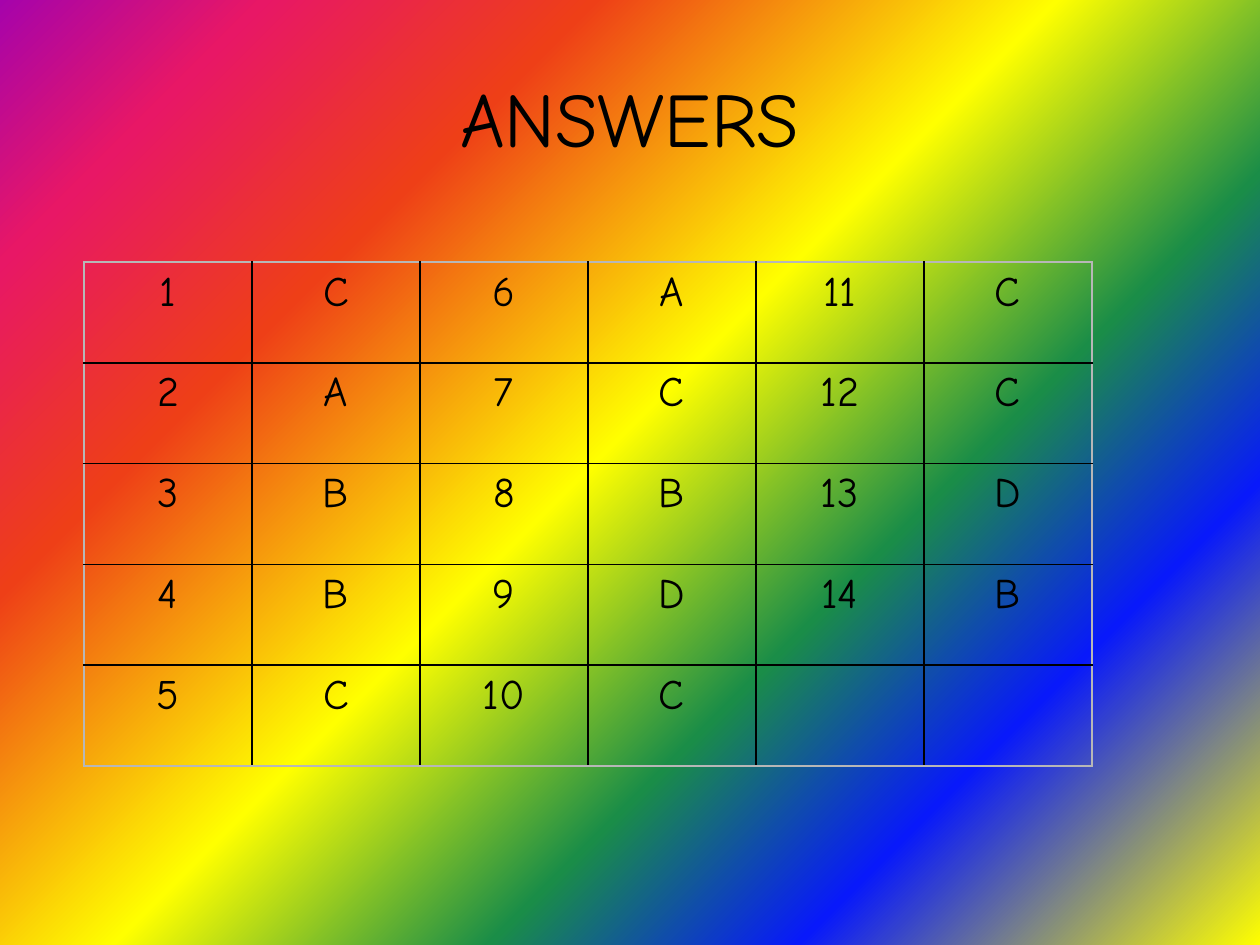
from pptx import Presentation
from pptx.dml.color import RGBColor
from pptx.enum.text import MSO_ANCHOR, PP_ALIGN
from pptx.oxml import parse_xml
from pptx.oxml.ns import nsdecls
from pptx.util import Pt

CENTER = PP_ALIGN.CENTER
MIDDLE = MSO_ANCHOR.MIDDLE
SCALE = 914400 / 126
FONT = "Comic Neue"
COLORS = {
    "ink": "000000",
    "edge": "B7B7B7",
    "yellow": "FFFF00",
    "blue": "0819FB",
    "green": "1A8D48",
    "red": "EE3F17",
    "pink": "E81766",
    "purple": "A603AB",
}
RAINBOW = [(0, "yellow"), (21, "blue"), (35, "green"), (52, "yellow"),
           (73, "red"), (88, "pink"), (100, "purple")]
ANSWERS = "CABBCACBDCCCDB"
ROWS, COLS = 5, 6


def px(n):
    return round(n * SCALE)


def style(para, size):
    para.alignment = CENTER
    para.font.name = FONT
    para.font.size = Pt(size)
    para.font.color.rgb = RGBColor.from_string(COLORS["ink"])


def add_rainbow(slide):
    stops = "".join(
        f'<a:gs pos="{pos * 1000}"><a:srgbClr val="{COLORS[name]}"/></a:gs>'
        for pos, name in RAINBOW)
    back = parse_xml(
        f'<p:bg {nsdecls("p", "a")}><p:bgPr><a:gradFill rotWithShape="0">'
        f'<a:gsLst>{stops}</a:gsLst><a:path path="circle">'
        '<a:fillToRect l="100000" t="100000"/></a:path></a:gradFill>'
        '<a:effectLst/></p:bgPr></p:bg>')
    slide.element.cSld.insert(0, back)


def add_title(slide, text):
    box = slide.shapes.add_textbox(px(63), px(38), px(1134), px(157))
    frame = box.text_frame
    frame.word_wrap = True
    frame.vertical_anchor = MIDDLE
    frame.text = text
    style(frame.paragraphs[0], 44)


def set_borders(cell, row, col):
    outer = {"lnL": col == 0, "lnR": col == COLS - 1,
             "lnT": row == 0, "lnB": row == ROWS - 1}
    props = cell._tc.get_or_add_tcPr()
    for spot, (tag, edge) in enumerate(outer.items()):
        color = COLORS["edge" if edge else "ink"]
        props.insert(spot, parse_xml(
            f'<a:{tag} {nsdecls("a")} w="{Pt(1)}"><a:solidFill>'
            f'<a:srgbClr val="{color}"/></a:solidFill></a:{tag}>'))


def add_answers(slide):
    table = slide.shapes.add_table(
        ROWS, COLS, px(84), px(262), px(1008), px(504)).table
    table.first_row = table.horz_banding = False
    for row in range(ROWS):
        for col in range(COLS):
            # Columns come in pairs: question number, then its answer
            index = col // 2 * ROWS + row
            cell = table.cell(row, col)
            if index < len(ANSWERS):
                cell.text = ANSWERS[index] if col % 2 else str(index + 1)
            style(cell.text_frame.paragraphs[0], 24)
            cell.fill.background()
            set_borders(cell, row, col)


def main():
    deck = Presentation()
    deck.slide_width, deck.slide_height = px(1260), px(945)
    slide = deck.slides.add_slide(deck.slide_layouts[6])
    add_rainbow(slide)
    add_title(slide, "ANSWERS")
    add_answers(slide)
    deck.save("out.pptx")


if __name__ == "__main__":
    main()
